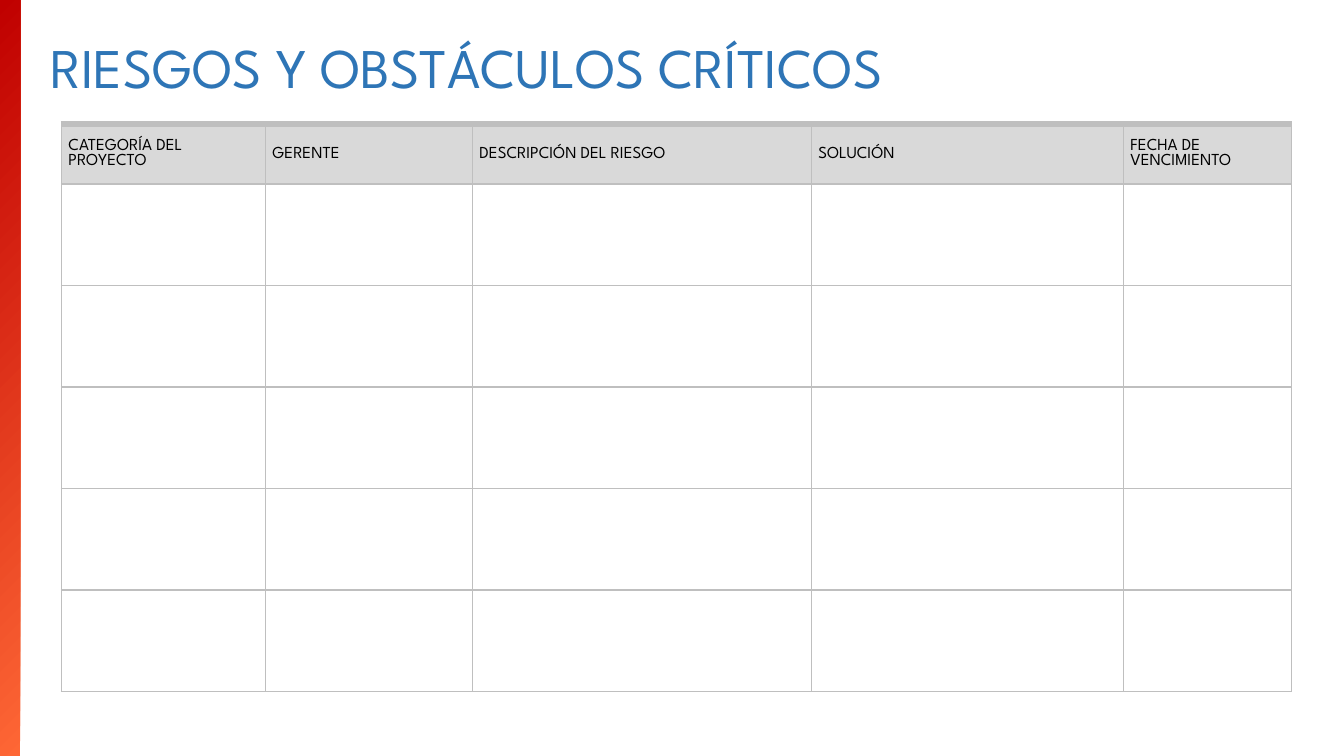
from lxml import etree
from pptx import Presentation
from pptx.dml.color import RGBColor
from pptx.enum.shapes import MSO_SHAPE
from pptx.enum.text import MSO_ANCHOR, MSO_AUTO_SIZE, PP_ALIGN
from pptx.oxml.ns import qn
from pptx.util import Pt

RECTANGLE = MSO_SHAPE.RECTANGLE
MIDDLE, BOTTOM = MSO_ANCHOR.MIDDLE, MSO_ANCHOR.BOTTOM
NO_AUTOFIT = MSO_AUTO_SIZE.NONE
LEFT = PP_ALIGN.LEFT

# Content
TITLE = "RIESGOS Y OBSTÁCULOS CRÍTICOS"
COLUMNS = [  # heading, width
    ("CATEGORÍA DEL PROYECTO", 145.7),
    ("GERENTE", 147.9),
    ("DESCRIPCIÓN DEL RIESGO", 242.1),
    ("SOLUCIÓN", 222.9),
    ("FECHA DE VENCIMIENTO", 120),
]
RISK_ROWS = 5

# Theme and measures in points
THEME = {
    "font": "League Spartan",
    "title": "2E75B6", "title_size": 40,
    "text": "000000", "header_size": 12,
    "header_fill": "D9D9D9", "body_fill": "FFFFFF",
    "border": "BFBFBF", "border_width": 1, "top_border_width": 4.5,
    "bar_stops": ("FE6735", "C00000"), "bar_angle": 135,
}
SLIDE_WIDTH, SLIDE_HEIGHT = 960, 540
TITLE_BOX = (28.8, 19.4, 779.8, 55.4)
TABLE_LEFT, TABLE_TOP = 43.9, 88.5
HEADER_HEIGHT, ROW_HEIGHT = 43, 72.5
CELL_MARGIN = 5.04
BAR_WIDTH = 14.4


def write_text(frame, text, *, size, color, anchor):
    frame.word_wrap = True
    frame.vertical_anchor = anchor
    paragraph = frame.paragraphs[0]
    paragraph.alignment = LEFT
    run = paragraph.add_run()
    run.text = text
    run.font.name = THEME["font"]
    run.font.size = Pt(size)
    run.font.bold = False
    run.font.color.rgb = RGBColor.from_string(color)


def set_borders(cell, top_width):
    properties = cell._tc.get_or_add_tcPr()
    width = THEME["border_width"]
    sides = (("L", width), ("R", width), ("T", top_width), ("B", width))
    for index, (side, side_width) in enumerate(sides):
        line = etree.Element(qn(f"a:ln{side}"), w=str(Pt(side_width)))
        fill = etree.SubElement(line, qn("a:solidFill"))
        etree.SubElement(fill, qn("a:srgbClr"), val=THEME["border"])
        properties.insert(index, line)


def add_title(slide):
    title = slide.shapes.title
    title.left, title.top, title.width, title.height = map(Pt, TITLE_BOX)
    title.text_frame.auto_size = NO_AUTOFIT
    write_text(title.text_frame, TITLE, size=THEME["title_size"],
               color=THEME["title"], anchor=BOTTOM)


def add_risk_table(slide):
    heights = [HEADER_HEIGHT] + [ROW_HEIGHT] * RISK_ROWS
    width = sum(column_width for _, column_width in COLUMNS)
    table = slide.shapes.add_table(
        len(heights), len(COLUMNS), Pt(TABLE_LEFT), Pt(TABLE_TOP),
        Pt(width), Pt(sum(heights))).table
    table.first_row = table.horz_banding = False
    for row, height in zip(table.rows, heights):
        row.height = Pt(height)

    for column_index, (heading, column_width) in enumerate(COLUMNS):
        table.columns[column_index].width = Pt(column_width)
        for row_index in range(len(heights)):
            is_header = row_index == 0
            cell = table.cell(row_index, column_index)
            cell.margin_left = cell.margin_right = Pt(CELL_MARGIN)
            cell.margin_top = cell.margin_bottom = Pt(0)
            cell.fill.solid()
            cell.fill.fore_color.rgb = RGBColor.from_string(
                THEME["header_fill" if is_header else "body_fill"])
            set_borders(cell, THEME["top_border_width" if is_header else "border_width"])
            if is_header:
                write_text(cell.text_frame, heading, size=THEME["header_size"],
                           color=THEME["text"], anchor=MIDDLE)
                cell.vertical_anchor = MIDDLE


def add_side_bar(slide):
    bar = slide.shapes.add_shape(RECTANGLE, Pt(0), Pt(0), Pt(BAR_WIDTH), Pt(SLIDE_HEIGHT))
    bar.shadow.inherit = False
    bar.line.fill.background()
    bar.fill.gradient()
    bar.fill.gradient_angle = THEME["bar_angle"]
    for stop, color in zip(bar.fill.gradient_stops, THEME["bar_stops"]):
        stop.color.rgb = RGBColor.from_string(color)


def main():
    presentation = Presentation()
    presentation.slide_width = Pt(SLIDE_WIDTH)
    presentation.slide_height = Pt(SLIDE_HEIGHT)
    title_only = presentation.slide_layouts[5]
    slide = presentation.slides.add_slide(title_only)
    add_risk_table(slide)
    add_title(slide)
    add_side_bar(slide)
    presentation.save("out.pptx")


if __name__ == "__main__":
    main()
